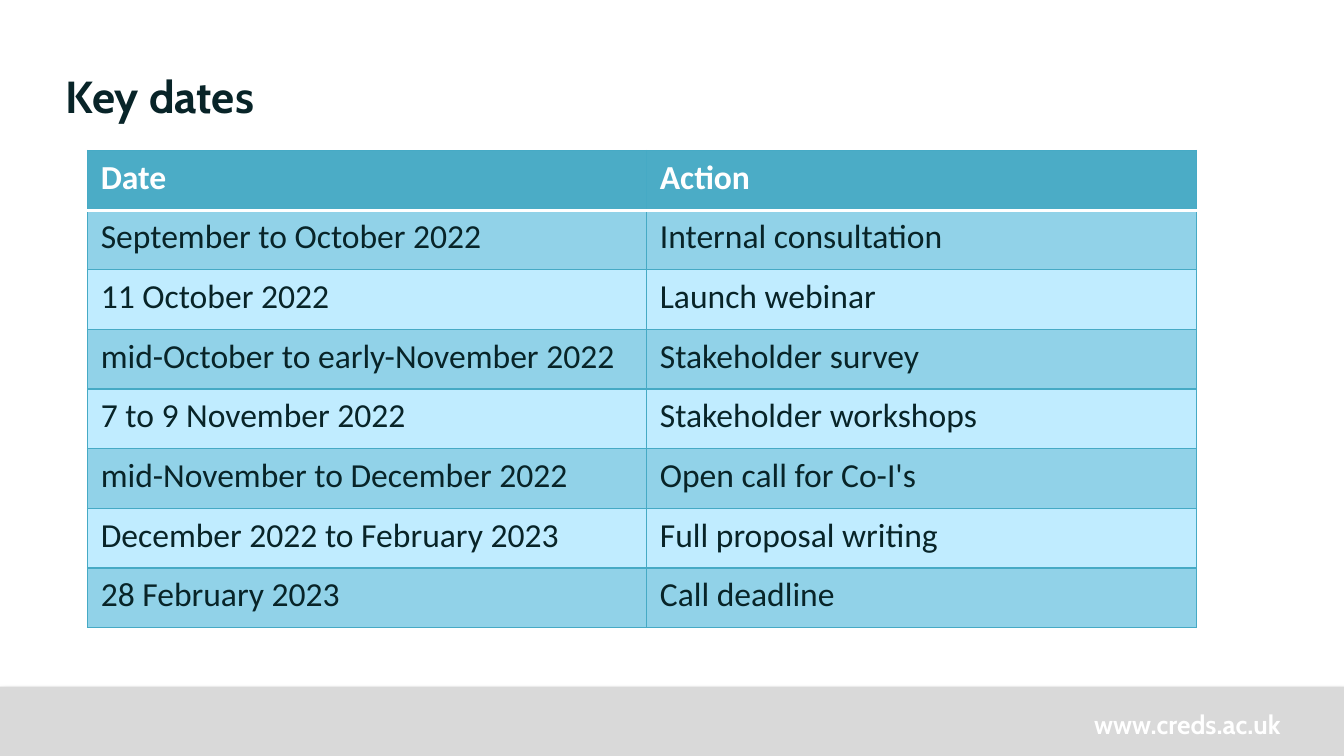
from lxml import etree
from pptx import Presentation
from pptx import util as u
from pptx.dml.color import RGBColor
from pptx.enum import shapes, text
from pptx.oxml.ns import qn

COLORS = {
    "ink": "082428",
    "white": "FFFFFF",
    "footer": "D9D9D9",
    "shadow": "000000",
    "header": "4BACC6",
    "dark_band": "91D2E8",
    "light_band": "C0ECFF",
    "border": "46AAC5",
}
ROWS = [
    ("Date", "Action"),
    ("September to October 2022", "Internal consultation"),
    ("11 October 2022", "Launch webinar"),
    ("mid-October to early-November 2022", "Stakeholder survey"),
    ("7 to 9 November 2022", "Stakeholder workshops"),
    ("mid-November to December 2022", "Open call for Co-I's"),
    ("December 2022 to February 2023", "Full proposal writing"),
    ("28 February 2023", "Call deadline"),
]
SLIDE_WIDTH = 10
COLUMN_WIDTHS = (4.16, 4.09)
TABLE_HEIGHT = 3.55


def rgb(name):
    return RGBColor.from_string(COLORS[name])


def format_font(p, font, size, color, bold):
    for r in p.runs:
        r.font.name = font
        r.font.size = u.Pt(size)
        r.font.bold = bold
        r.font.color.rgb = rgb(color)


def add_color(parent, name):
    return etree.SubElement(parent, qn("a:srgbClr"), val=COLORS[name])


def add_footer_bar(s):
    sp = s.shapes.add_shape(
        shapes.MSO_SHAPE.RECTANGLE,
        u.Inches(0), u.Inches(5.11), u.Inches(SLIDE_WIDTH), u.Inches(0.59),
    )
    sp.fill.solid()
    sp.fill.fore_color.rgb = rgb("footer")
    sp.line.fill.background()
    sp.shadow.inherit = False
    effects = sp._element.spPr.find(qn("a:effectLst"))
    shadow = etree.SubElement(
        effects, qn("a:outerShdw"), blurRad=str(u.Pt(3.1)),
        dist=str(u.Pt(1.8)), dir="5400000", rotWithShape="0",
    )
    etree.SubElement(add_color(shadow, "shadow"), qn("a:alpha"), val="35000")


def add_text(s, content, left, top, width, height, size, color, align, spacing=None):
    sp = s.shapes.add_textbox(*map(u.Inches, (left, top, width, height)))
    tf = sp.text_frame
    tf.word_wrap = True
    tf.margin_left = tf.margin_right = tf.margin_top = tf.margin_bottom = 0
    tf.text = content
    p = tf.paragraphs[0]
    p.alignment = align
    if spacing:
        p.line_spacing = u.Pt(spacing)
    format_font(p, "Cabin", size, color, True)


def add_border(cell, side, color, width):
    tc_pr = cell._tc.get_or_add_tcPr()
    line = etree.SubElement(tc_pr, qn("a:ln" + side), w=str(u.Pt(width)))
    add_color(etree.SubElement(line, qn("a:solidFill")), color)


def format_cell(cell, row, content):
    header = row == 0
    white_side = {0: "B", 1: "T"}.get(row)
    for side in "LRTB":
        style = ("white", 2) if side == white_side else ("border", 0.75)
        add_border(cell, side, *style)
    band = "header" if header else "dark_band" if row % 2 else "light_band"
    cell.fill.solid()
    cell.fill.fore_color.rgb = rgb(band)
    cell.text = content
    color = "white" if header else "ink"
    format_font(cell.text_frame.paragraphs[0], "Calibri", 18, color, header)


def add_dates_table(s):
    table = s.shapes.add_table(
        len(ROWS), len(COLUMN_WIDTHS), u.Inches(0.65), u.Inches(1.12),
        u.Inches(sum(COLUMN_WIDTHS)), u.Inches(TABLE_HEIGHT),
    ).table
    for column, width in zip(table.columns, COLUMN_WIDTHS):
        column.width = u.Inches(width)
    for i, values in enumerate(ROWS):
        table.rows[i].height = u.Inches(TABLE_HEIGHT / len(ROWS))
        for j, value in enumerate(values):
            format_cell(table.cell(i, j), i, value)


def main():
    prs = Presentation()
    prs.slide_width = u.Inches(SLIDE_WIDTH)
    prs.slide_height = u.Inches(SLIDE_WIDTH * 9 / 16)
    s = prs.slides.add_slide(prs.slide_layouts[6])
    add_footer_bar(s)
    add_text(s, "www.creds.ac.uk", 7.49, 5.27, 2.04, 0.24, 14, "white",
             text.PP_ALIGN.RIGHT)
    add_text(s, "Key dates", 0.49, 0.47, 5.51, 0.43, 24, "ink",
             text.PP_ALIGN.LEFT, spacing=32)
    add_dates_table(s)
    prs.save("out.pptx")


if __name__ == "__main__":
    main()
